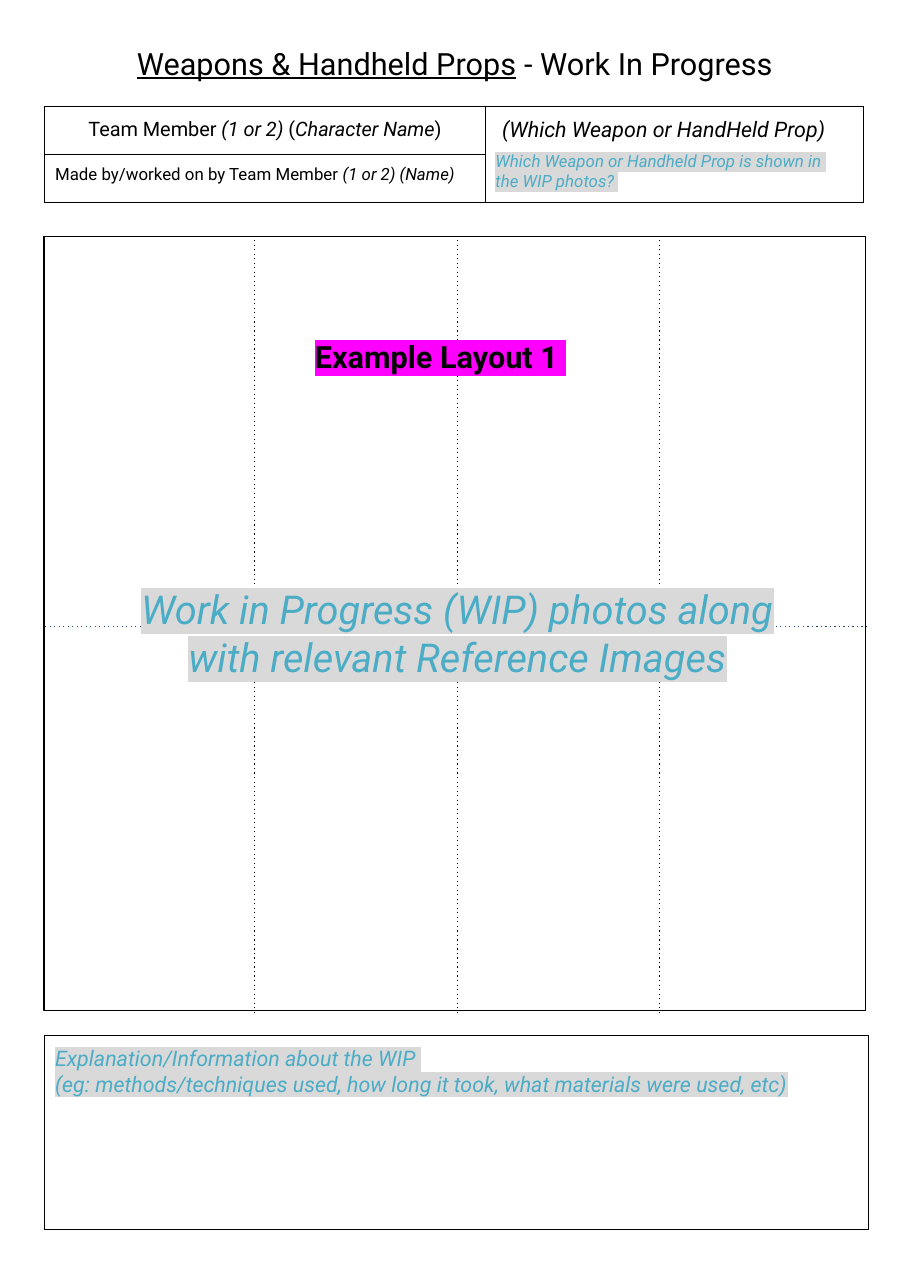
from typing import NamedTuple, Optional

from lxml import etree
from pptx import Presentation
from pptx import util as u
from pptx.dml.color import RGBColor
from pptx.enum import shapes, text
from pptx.oxml.ns import qn

BLACK, NAVY, TEAL = "000000", "1F497D", "4BACC6"
GREY, MAGENTA = "D9D9D9", "FF00FF"
LINE_WIDTH = u.Pt(0.75)
CENTER = text.PP_ALIGN.CENTER


class Span(NamedTuple):
    words: str
    italic: bool = False
    underline: bool = False


class Guide(NamedTuple):
    x1: float
    y1: float
    x2: float
    y2: float
    color: str = BLACK


class Label(NamedTuple):
    left: float
    top: float
    width: float
    height: float
    paragraphs: list[list[Span]]
    size: float
    color: str = BLACK
    bold: bool = False
    highlight: Optional[str] = None
    align: Optional[text.PP_ALIGN] = None
    inset: float = 0.1
    middle: bool = False


def rgb(color: str) -> RGBColor:
    return RGBColor.from_string(color)


def add_color(parent, tag: str, color: str):
    """Add a child element that holds one RGB colour."""
    holder = etree.SubElement(parent, qn(tag))
    etree.SubElement(holder, qn("a:srgbClr"), val=color)
    return holder


def write(frame, paragraphs: list[list[Span]], *, size: float, color: str = BLACK,
          bold: bool = False, highlight: Optional[str] = None,
          align: Optional[text.PP_ALIGN] = None) -> None:
    for i, spans in enumerate(paragraphs):
        paragraph = frame.add_paragraph() if i else frame.paragraphs[0]
        paragraph.alignment = align
        for span in spans:
            run = paragraph.add_run()
            run.text = span.words
            font = run.font
            font.size, font.bold = u.Pt(size), bold
            font.italic, font.underline = span.italic, span.underline
            font.color.rgb = rgb(color)
            if highlight:
                add_color(run._r.get_or_add_rPr(), "a:highlight", highlight)
            font.name = "Roboto"


def add_label(slide, label: Label) -> None:
    box = slide.shapes.add_textbox(*map(u.Inches, label[:4]))
    frame = box.text_frame
    frame.word_wrap = True
    frame.margin_left = frame.margin_right = u.Inches(0.1)
    frame.margin_top = frame.margin_bottom = u.Inches(label.inset)
    if label.middle:
        frame.vertical_anchor = text.MSO_ANCHOR.MIDDLE
    write(frame, label.paragraphs, size=label.size, color=label.color,
          bold=label.bold, highlight=label.highlight, align=label.align)


def add_guide(slide, guide: Guide) -> None:
    """Draw a dotted guide line."""
    line = slide.shapes.add_connector(
        shapes.MSO_CONNECTOR.STRAIGHT, *map(u.Inches, guide[:4]))
    line.line.width = LINE_WIDTH
    line.line.color.rgb = rgb(guide.color)
    etree.SubElement(line.line._get_or_add_ln(), qn("a:prstDash"), val="dot")
    etree.SubElement(line._element.spPr, qn("a:effectLst"))


def add_grid(slide, left: float, top: float, widths: list[float], heights: list[float]):
    """Add an unfilled table with thin black borders."""
    grid = slide.shapes.add_table(
        len(heights), len(widths), u.Inches(left), u.Inches(top),
        u.Inches(sum(widths)), u.Inches(sum(heights))).table
    grid.first_row = grid.horz_banding = False
    for column, width in zip(grid.columns, widths):
        column.width = u.Inches(width)
    for row, height in zip(grid.rows, heights):
        row.height = u.Inches(height)
    for cell in grid.iter_cells():
        cell.margin_left = cell.margin_right = u.Inches(0.1)
        cell.margin_top = cell.margin_bottom = u.Inches(0.1)
        for side in ("a:lnL", "a:lnR", "a:lnT", "a:lnB"):
            border = etree.SubElement(cell._tc.get_or_add_tcPr(), qn(side),
                                      w=str(LINE_WIDTH))
            add_color(border, "a:solidFill", BLACK)
        cell.fill.background()
    return grid


GUIDES = [Guide(x, 2.18, x, 9.2) for x in (2.31, 4.15, 5.99)]
GUIDES.append(Guide(0.41, 5.69, 7.87, 5.69, NAVY))

TITLE = Label(0.41, 0.35, 7.44, 0.44,
              [[Span("Weapons & Handheld Props", underline=True),
                Span(" - Work In Progress")]],
              20, align=CENTER, inset=0.05, middle=True)
PHOTO_HINT = Label(0.97, 5.26, 6.37, 1.17,
                   [[Span("Work in Progress (WIP) photos along with relevant "
                          "Reference Images", italic=True)]],
                   26, TEAL, highlight=GREY, align=CENTER, inset=0.05)
LAYOUT_NAME = Label(2.76, 2.97, 2.73, 0.54, [[Span("Example Layout 1 ")]],
                    20, bold=True, highlight=MAGENTA)
PROP_HINT = Label(4.4, 1.27, 3.5, 0.57,
                  [[Span("Which Weapon or Handheld Prop is shown in ", italic=True)],
                   [Span("the WIP photos? ", italic=True)]],
                  11, TEAL, highlight=GREY)


def main() -> None:
    deck = Presentation()
    deck.slide_width, deck.slide_height = u.Inches(8.27), u.Inches(11.69)
    slide = deck.slides.add_slide(deck.slide_layouts[6])

    photo_area = slide.shapes.add_shape(
        shapes.MSO_SHAPE.RECTANGLE, *map(u.Inches, (0.4, 2.15, 7.46, 7.02)))
    photo_area.shadow.inherit = False
    photo_area.fill.background()
    photo_area.line.color.rgb = rgb(BLACK)
    photo_area.line.width = LINE_WIDTH

    add_label(slide, TITLE)
    for guide in GUIDES:
        add_guide(slide, guide)
    add_label(slide, PHOTO_HINT)
    add_label(slide, LAYOUT_NAME)

    explanation = add_grid(slide, 0.4, 9.4, [7.48], [1.76])
    write(explanation.cell(0, 0).text_frame,
          [[Span("Explanation/Information about the WIP ", italic=True)],
           [Span("(eg: methods/techniques used, how long it took, "
                 "what materials were used, etc)", italic=True)]],
          size=14, color=TEAL, highlight=GREY)

    header = add_grid(slide, 0.4, 0.97, [4.01, 3.43], [0.43, 0.43])
    header.cell(0, 1).merge(header.cell(1, 1))
    write(header.cell(0, 0).text_frame,
          [[Span("Team Member "), Span("(1 or 2) ", italic=True), Span("("),
            Span("Character Name", italic=True), Span(")")]],
          size=13, align=CENTER)
    write(header.cell(0, 1).text_frame,
          [[Span(" (Which Weapon or HandHeld Prop)", italic=True)]], size=14)
    write(header.cell(1, 0).text_frame,
          [[Span("Made by/worked on by Team Member"),
            Span(" (1 or 2) (Name)", italic=True)]], size=11)
    add_label(slide, PROP_HINT)

    deck.save("out.pptx")


if __name__ == "__main__":
    main()
